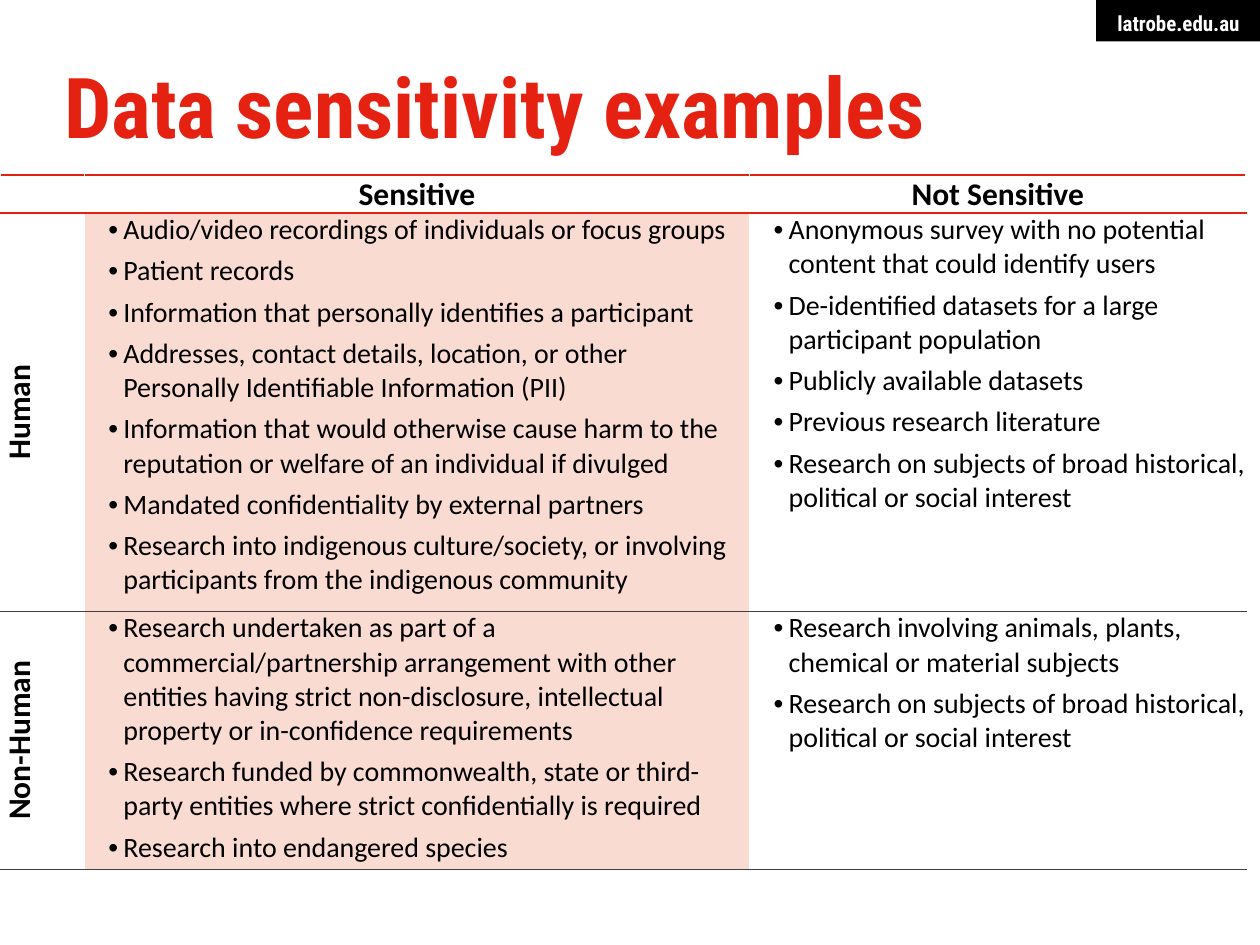
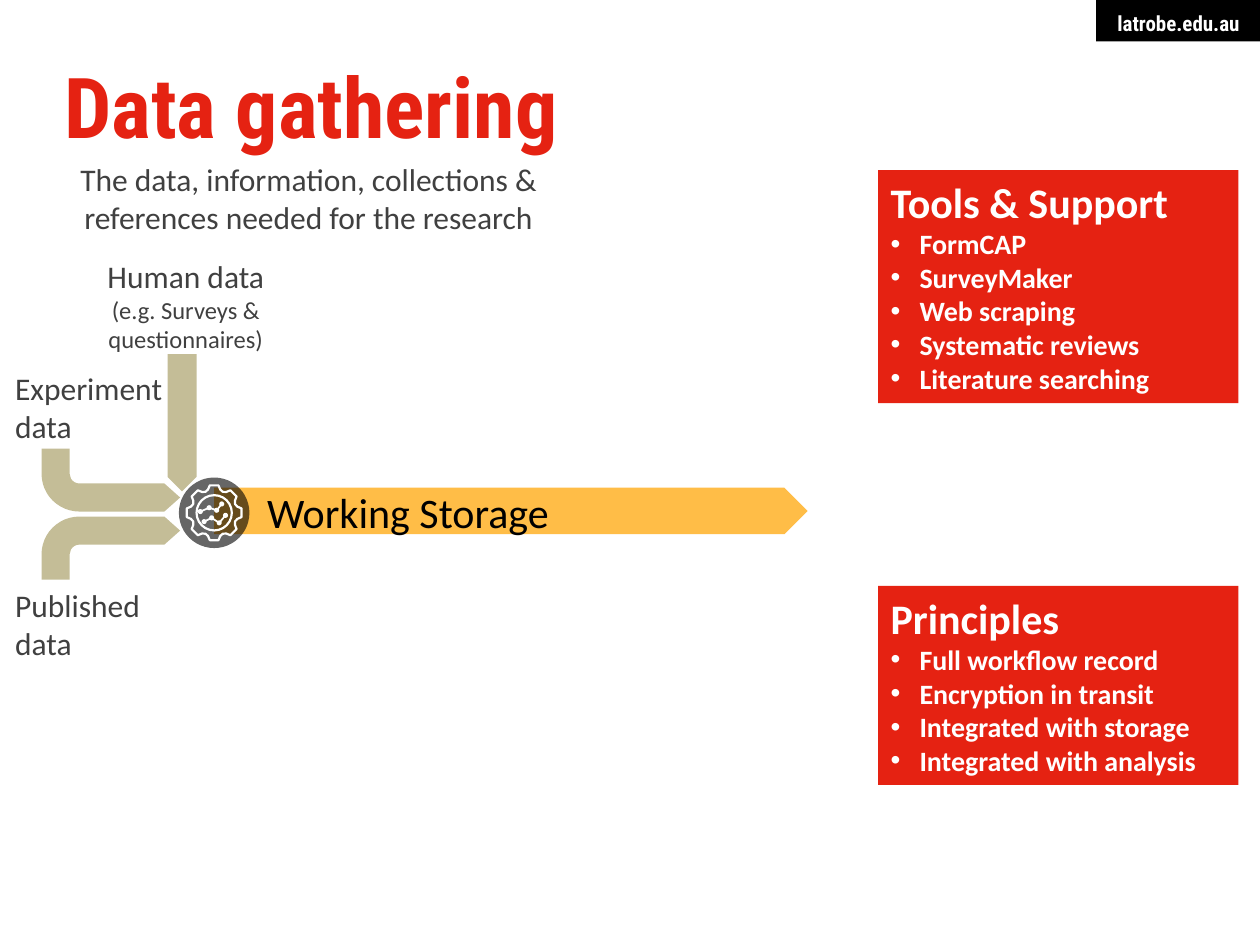
from dataclasses import dataclass
from itertools import pairwise
from math import cos, radians, sin

from lxml import etree
from pptx import Presentation
from pptx.dml.color import RGBColor
from pptx.enum.shapes import MSO_CONNECTOR, MSO_SHAPE
from pptx.enum.text import MSO_ANCHOR, PP_ALIGN
from pptx.oxml.ns import qn
from pptx.util import Pt

PX = 9144  # EMU per px, 100 px to the inch
RECT, ELLIPSE = MSO_SHAPE.RECTANGLE, MSO_SHAPE.OVAL
BENT_ARROW, RIGHT_ARROW = MSO_SHAPE.BENT_ARROW, MSO_SHAPE.RIGHT_ARROW
STRAIGHT = MSO_CONNECTOR.STRAIGHT
LEFT, CENTER, RIGHT = PP_ALIGN.LEFT, PP_ALIGN.CENTER, PP_ALIGN.RIGHT
TOP, MIDDLE = MSO_ANCHOR.TOP, MSO_ANCHOR.MIDDLE


@dataclass(frozen=True)
class TextStyle:
    size: int
    color: str
    bold: bool = False
    font: str = "Calibri"


@dataclass(frozen=True)
class Theme:
    red: str = "E52212"
    black: str = "000000"
    white: str = "FFFFFF"
    tan: str = "C4BD97"
    amber: str = "FFBD47"
    sensitive: str = "E84C22"
    row_line: str = "404040"
    title: TextStyle = TextStyle(48, "E52212", True, "Roboto Condensed")
    site: TextStyle = TextStyle(12, "FFFFFF", True, "Roboto Condensed")
    table_head: TextStyle = TextStyle(18, "000000", True)
    table_body: TextStyle = TextStyle(16, "000000")
    label: TextStyle = TextStyle(18, "404040")
    small_label: TextStyle = TextStyle(14, "404040")
    storage: TextStyle = TextStyle(24, "000000")
    panel_head: TextStyle = TextStyle(24, "FFFFFF", True)
    panel_body: TextStyle = TextStyle(16, "FFFFFF", True)


THEME = Theme()

SENSITIVITY_ROWS = [
    ("Human", [
        "Audio/video recordings of individuals or focus groups",
        "Patient records",
        "Information that personally identifies a participant",
        "Addresses, contact details, location, or other Personally Identifiable Information (PII)",
        "Information that would otherwise cause harm to the reputation or welfare of an "
        "individual if divulged",
        "Mandated confidentiality by external partners",
        "Research into indigenous culture/society, or involving participants from the "
        "indigenous community",
    ], [
        "Anonymous survey with no potential content that could identify users",
        "De-identified datasets for a large participant population",
        "Publicly available datasets",
        "Previous research literature",
        "Research on subjects of broad historical, political or social interest",
    ]),
    ("Non-Human", [
        "Research undertaken as part of a commercial/partnership arrangement with other "
        "entities having strict non-disclosure, intellectual property or in-confidence "
        "requirements",
        "Research funded by commonwealth, state or third-party entities where strict "
        "confidentially is required",
        "Research into endangered species",
    ], [
        "Research involving animals, plants, chemical or material subjects",
        "Research on subjects of broad historical, political or social interest",
    ]),
]


def px(*lengths):
    return [round(length * PX) for length in lengths]


def set_alpha(element, percent):
    """Make the solid fill below element partly transparent."""
    color = element.find(f"{qn('a:solidFill')}/{qn('a:srgbClr')}")
    etree.SubElement(color, qn("a:alpha"), val=str(percent * 1000))


def set_bullet(para, indent):
    props = para._p.get_or_add_pPr()
    props.set("marL", str(indent[0] * PX))
    props.set("indent", str(-indent[1] * PX))
    etree.SubElement(props, qn("a:buFont"), typeface="Arial")
    etree.SubElement(props, qn("a:buChar"), char="•")


def add_para(frame, text, style, align=LEFT, bullet=None):
    """Write into the empty first paragraph, or else append one."""
    para = frame.paragraphs[0]
    if para.runs:
        para = frame.add_paragraph()
    para.alignment = align
    if bullet:
        set_bullet(para, bullet)
    span = para.add_run()
    span.text = text
    span.font.name = style.font
    span.font.size = Pt(style.size)
    span.font.bold = style.bold
    span.font.color.rgb = RGBColor.from_string(style.color)
    return para


def set_margins(target, left=0, top=0, right=0, bottom=0):
    target.margin_left, target.margin_top = px(left, top)
    target.margin_right, target.margin_bottom = px(right, bottom)


def add_text(page, place, paras, align=LEFT):
    """Add a text box from (text, style) pairs."""
    frame = page.shapes.add_textbox(*px(*place)).text_frame
    frame.word_wrap = True
    set_margins(frame)
    for text, style in paras:
        add_para(frame, text, style, align)
    return frame


def paint(shape, fill=None, line=None):
    shape.shadow.inherit = False
    if fill:
        shape.fill.solid()
        shape.fill.fore_color.rgb = RGBColor.from_string(fill)
    else:
        shape.fill.background()
    if line:
        shape.line.color.rgb = RGBColor.from_string(line)
        shape.line.width = Pt(1.25)
    else:
        shape.line.fill.background()


def add_block(page, preset, place, fill=None, line=None, adjust=()):
    block = page.shapes.add_shape(preset, *px(*place))
    for index, value in enumerate(adjust):
        block.adjustments[index] = value
    paint(block, fill, line)
    return block


def add_circle(page, center, radius, fill=None, line=None):
    x, y = center
    place = (x - radius, y - radius, 2 * radius, 2 * radius)
    return add_block(page, ELLIPSE, place, fill, line)


def add_page(deck, title):
    page = deck.slides.add_slide(deck.slide_layouts[6])
    frame = add_block(page, RECT, (870, 0, 130, 33), THEME.black).text_frame
    frame.word_wrap = False
    frame.vertical_anchor = TOP
    set_margins(frame, 16, 8, 16, 5)
    add_para(frame, "latrobe.edu.au", THEME.site, RIGHT)
    heading = add_text(page, (51, 47, 898, 92), [(title, THEME.title)])
    heading.paragraphs[0].line_spacing = Pt(55)
    return page


def set_border(cell, side, color, width):
    line = etree.SubElement(cell._tc.get_or_add_tcPr(), qn(f"a:{side}"), w=str(Pt(width)))
    fill = etree.SubElement(line, qn("a:solidFill"))
    etree.SubElement(fill, qn("a:srgbClr"), val=color)


def add_sensitivity_table(page):
    table = page.shapes.add_table(3, 3, *px(0, 139, 989, 551)).table
    table.first_row = table.horz_banding = False
    for column, width in zip(table.columns, px(67, 528, 394)):
        column.width = width
    for row, height in zip(table.rows, px(30, 316, 205)):
        row.height = height

    rules = [(THEME.red, 1)] * 2 + [(THEME.row_line, 0.5)] * 2
    for r, row in enumerate(table.rows):
        for c, cell in enumerate(row.cells):
            set_margins(cell)
            set_border(cell, "lnT", *rules[r])
            set_border(cell, "lnB", *rules[r + 1])
            if r > 0 and c == 1:
                cell.fill.solid()
                cell.fill.fore_color.rgb = RGBColor.from_string(THEME.sensitive)
                set_alpha(cell._tc.tcPr, 20)
            else:
                cell.fill.background()

    for c, heading in enumerate(["Sensitive", "Not Sensitive"], 1):
        add_para(table.cell(0, c).text_frame, heading, THEME.table_head, CENTER)
    for r, (subject, *examples) in enumerate(SENSITIVITY_ROWS, 1):
        side = table.cell(r, 0)
        side.vertical_anchor = MIDDLE
        side._tc.tcPr.set("vert", "vert270")
        add_para(side.text_frame, subject, THEME.table_head, CENTER)
        for c, items in enumerate(examples, 1):
            for item in items:
                para = add_para(table.cell(r, c).text_frame, item, THEME.table_body,
                                bullet=(31, 12))
                para.space_after = Pt(4)


def add_panel(page, place, heading, items):
    frame = add_block(page, RECT, place, THEME.red).text_frame
    frame.word_wrap = True
    frame.vertical_anchor = TOP
    add_para(frame, heading, THEME.panel_head)
    for item in items:
        add_para(frame, item, THEME.panel_body, bullet=(23, 23))


def add_gear(page, center, teeth=8):
    """Outline a gear: each tooth has two corners and a rounded notch after it."""
    profile = [(-9, 22), (9, 22), (15, 19), (22.5, 18), (30, 19)]
    points = []
    for tooth in range(teeth):
        for degrees, radius in profile:
            angle = radians(tooth * 360 / teeth + degrees)
            points.append(px(center[0] + radius * cos(angle),
                             center[1] + radius * sin(angle)))
    builder = page.shapes.build_freeform(*points[0])
    builder.add_line_segments(points[1:], close=True)
    paint(builder.convert_to_shape(), line=THEME.white)


def add_trace(page, nodes):
    """Draw a line of linked dots."""
    for start, end in pairwise(nodes):
        link = page.shapes.add_connector(STRAIGHT, *px(*start, *end))
        link.line.color.rgb = RGBColor.from_string(THEME.white)
        link.line.width = Pt(1)
        etree.SubElement(link._element.spPr, qn("a:effectLst"))
    for node in nodes:
        add_circle(page, node, 2, THEME.white)


def add_analysis_icon(page, center):
    disc = add_circle(page, center, 28, THEME.black)
    set_alpha(disc._element.spPr, 60)
    add_gear(page, center)
    add_circle(page, center, 14, line=THEME.white)
    add_trace(page, [(162, 414), (168, 411), (174, 415), (179, 409)])
    add_trace(page, [(159, 406), (166, 403), (172, 405), (176, 400)])


def add_data_flow(page):
    bend = (0.512, 0.223, 0.25, 0.601)
    add_block(page, BENT_ARROW, (33, 410, 110, 50), THEME.tan, adjust=bend)
    upper = add_block(page, BENT_ARROW, (33, 356, 110, 50), THEME.tan, adjust=bend)
    upper.rotation = 180
    upper._element.spPr.xfrm.set("flipH", "1")
    down = add_block(page, RIGHT_ARROW, (90, 324, 109, 23), THEME.tan, adjust=(1, 0.5))
    down.rotation = 90
    add_block(page, RIGHT_ARROW, (170, 387, 471, 37), THEME.amber, adjust=(1, 0.5))
    add_text(page, (212, 386, 272, 40), [("Working Storage", THEME.storage)])
    add_analysis_icon(page, (170, 407))


def build_sensitivity_page(deck):
    page = add_page(deck, "Data sensitivity examples")
    add_sensitivity_table(page)


def build_gathering_page(deck):
    page = add_page(deck, "Data gathering")
    add_data_flow(page)
    label = THEME.label
    add_text(page, (52, 127, 386, 61), [
        ("The data, information, collections & references needed for the research", label),
    ], CENTER)
    add_text(page, (12, 465, 127, 61), [("Published data", label)])
    add_text(page, (12, 293, 124, 61), [("Experiment", label), ("data", label)])
    add_text(page, (44, 204, 207, 77), [
        ("Human data", label),
        ("(e.g. Surveys & questionnaires)", THEME.small_label),
    ], CENTER)
    add_panel(page, (697, 465, 286, 158), "Principles", [
        "Full workflow record", "Encryption in transit",
        "Integrated with storage", "Integrated with analysis",
    ])
    add_panel(page, (697, 135, 286, 185), "Tools & Support", [
        "FormCAP", "SurveyMaker", "Web scraping",
        "Systematic reviews", "Literature searching",
    ])


def main():
    deck = Presentation()
    deck.slide_width, deck.slide_height = px(1000, 750)
    build_sensitivity_page(deck)
    build_gathering_page(deck)
    deck.save("out.pptx")


if __name__ == "__main__":
    main()
